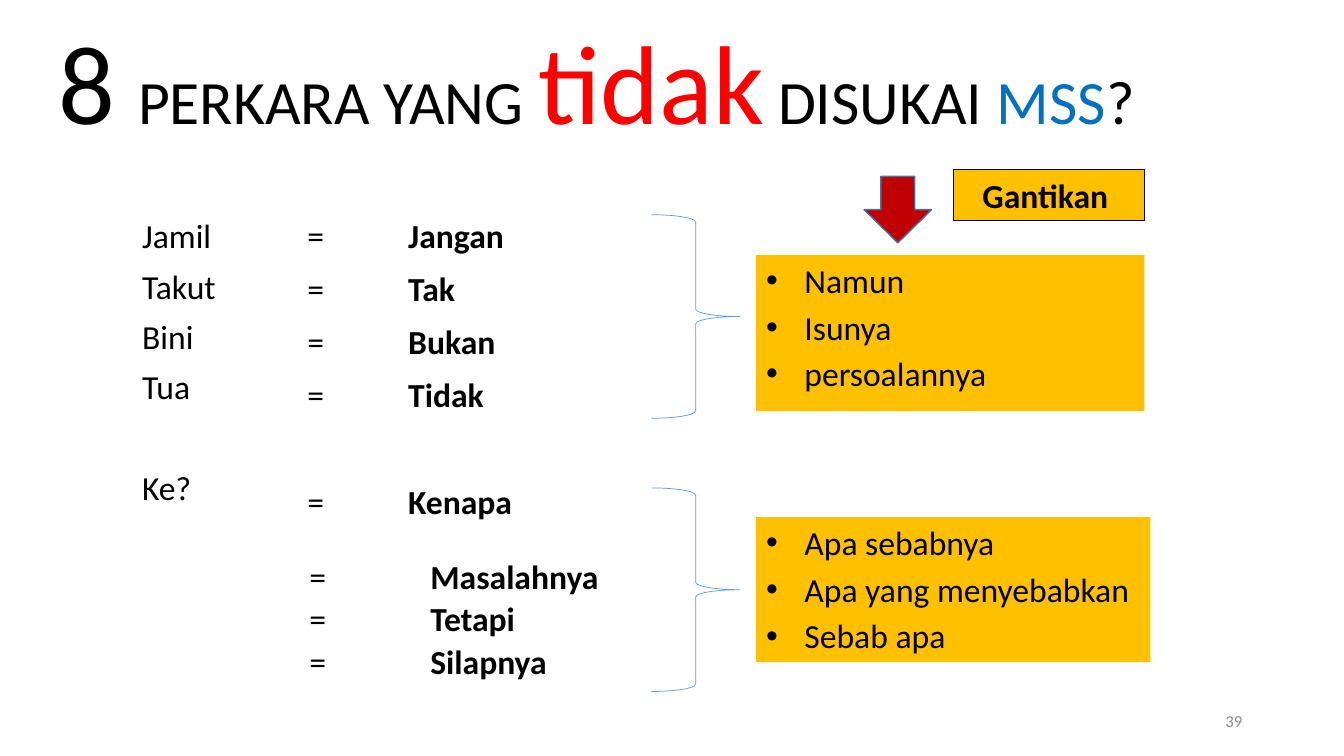
"""Build the slide on eight things MSS dislikes and what replaces them."""
from pptx import Presentation
from pptx.dml.color import RGBColor
from pptx.enum import shapes, text
from pptx.oxml import xmlchemy as x
from pptx.util import Inches, Pt

BLACK, RED, BLUE, AMBER = "000000", "FF0000", "0070C0", "FFC000"
TITLE = [("8", 80, BLACK), (" ", 72, BLACK), ("PERKARA YANG ", 44, BLACK),
         ("tidak", 80, RED), (" DISUKAI ", 44, BLACK), ("MSS", 44, BLUE), ("?", 44, BLACK)]
CLUES = ["Jamil", "Takut", "Bini", "Tua", "Ke?"]
WORDS = ["Jangan", "Tak", "Bukan", "Tidak", "Kenapa"]
MORE_WORDS = ["Masalahnya", "Tetapi", "Silapnya"]
REPLACEMENTS = [
    ((7.5, 2.53, 3.85, 1.55), ["Namun", "Isunya", "persoalannya"]),
    ((7.5, 5.13, 3.91, 1.44), ["Apa sebabnya", "Apa yang menyebabkan", "Sebab apa"]),
]
BRACE_TOPS = [2.13, 4.84]
LINE = 26.4


def rgb(value):
    return RGBColor.from_string(value)


def add_run(p, content, size=24, color=BLACK, bold=False):
    r = p.add_run()
    r.text = content
    r.font.name, r.font.size, r.font.bold = "Calibri", Pt(size), bold
    r.font.color.rgb = rgb(color)


def place(sp, box):
    sp.left, sp.top, sp.width, sp.height = map(Inches, box)


def add_text(s, box):
    sp = s.shapes.add_textbox(*map(Inches, box))
    sp.text_frame.word_wrap = True
    return sp.text_frame


def add_shape(s, kind, box, fill=None, line=None, width=1):
    sp = s.shapes.add_shape(kind, *map(Inches, box))
    sp.shadow.inherit = False
    if fill:
        sp.fill.solid()
        sp.fill.fore_color.rgb = rgb(fill)
    else:
        sp.fill.background()
    if line:
        sp.line.color.rgb = rgb(line)
        sp.line.width = Pt(width)
    else:
        sp.line.fill.background()
    return sp


def add_lines(tf, lines, before, spacing=0.9, gap_at=None):
    for i, line in enumerate(lines):
        p = tf.paragraphs[0] if i == 0 else tf.add_paragraph()
        p.alignment = text.PP_ALIGN.LEFT
        p.line_spacing = spacing
        p.space_before = Pt(before * 2 + LINE if i == gap_at else before)
        yield p, line


def set_bullet(p, char=None, indent=0):
    pPr = p._p.get_or_add_pPr()
    pPr.set("marL", str(Inches(indent)))
    pPr.set("indent", str(-Inches(indent)))
    if char:
        font = pPr.makeelement(x.qn("a:buFont"), {"typeface": "Arial"})
        pPr.append(font)
        pPr.append(pPr.makeelement(x.qn("a:buChar"), {"char": char}))
    else:
        pPr.append(pPr.makeelement(x.qn("a:buNone"), {}))


def set_tab(p, position):
    pPr = p._p.get_or_add_pPr()
    tabs = pPr.makeelement(x.qn("a:tabLst"), {})
    tabs.append(tabs.makeelement(x.qn("a:tab"), {"pos": str(Inches(position)), "algn": "l"}))
    pPr.append(tabs)


def add_word_list(s, box, words, before, tab, gap_at=None):
    for p, word in add_lines(add_text(s, box), words, before, gap_at=gap_at):
        set_tab(p, tab)
        add_run(p, "=\t")
        add_run(p, word, bold=True)


def main():
    prs = Presentation()
    prs.slide_width, prs.slide_height = Inches(13.33), Inches(7.5)
    s = prs.slides.add_slide(prs.slide_layouts[1])
    title, body = s.placeholders

    place(title, (0.48, 0, 11, 1.76))
    tf = title.text_frame
    tf.auto_size = text.MSO_AUTO_SIZE.NONE
    tf.vertical_anchor = text.MSO_ANCHOR.MIDDLE
    for p, parts in add_lines(tf, [TITLE], 0):
        for part in parts:
            add_run(p, *part)

    place(body, (1.31, 2.13, 1.35, 4.43))
    body.text_frame.auto_size = text.MSO_AUTO_SIZE.NONE
    for p, clue in add_lines(body.text_frame, CLUES, 10, gap_at=4):
        set_bullet(p)
        add_run(p, clue)

    add_word_list(s, (2.95, 2.13, 2.61, 4.43), WORDS, 12, 1, gap_at=4)
    add_word_list(s, (2.97, 5.51, 3.26, 1.35), MORE_WORDS, 4.5, 1.2)

    for top in BRACE_TOPS:
        add_shape(s, shapes.MSO_SHAPE.RIGHT_BRACE, (6.46, top, 0.88, 2.02), line="5B9BD5", width=0.5)

    for box, phrases in REPLACEMENTS:
        tf = add_shape(s, shapes.MSO_SHAPE.RECTANGLE, box, AMBER).text_frame
        tf.vertical_anchor = text.MSO_ANCHOR.TOP
        for p, phrase in add_lines(tf, phrases, 4.5, spacing=1):
            set_bullet(p, "•", 0.38)
            add_run(p, phrase)

    label = add_shape(s, shapes.MSO_SHAPE.RECTANGLE, (9.46, 1.68, 1.89, 0.51), AMBER, BLACK, 0.75)
    p = label.text_frame.paragraphs[0]
    p.alignment = text.PP_ALIGN.CENTER
    add_run(p, "Gantikan ", bold=True)
    add_shape(s, shapes.MSO_SHAPE.DOWN_ARROW, (8.57, 1.75, 0.67, 0.66), "C00000", "43739E")

    tf = add_text(s, (9.42, 6.95, 3, 0.4))
    tf.vertical_anchor = text.MSO_ANCHOR.MIDDLE
    p = tf.paragraphs[0]
    p.alignment = text.PP_ALIGN.RIGHT
    add_run(p, "39", 12, "8C8C8C")

    prs.save("out.pptx")


if __name__ == "__main__":
    main()
